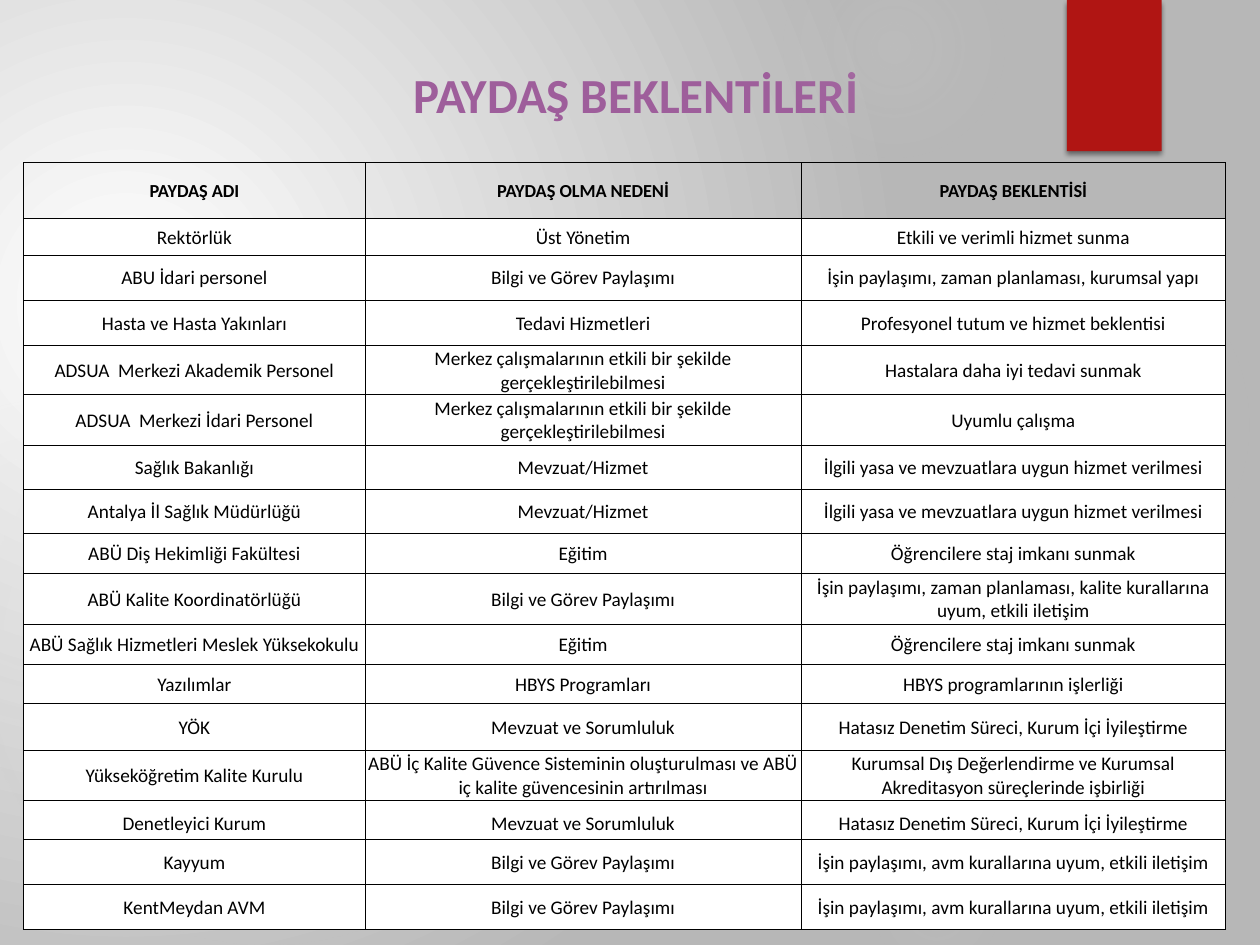
from lxml import etree
from pptx import Presentation
from pptx.dml.color import RGBColor
from pptx.enum.shapes import MSO_SHAPE
from pptx.enum.text import MSO_ANCHOR, PP_ALIGN
from pptx.oxml.ns import qn
from pptx.util import Cm, Pt

OVAL, RECT = MSO_SHAPE.OVAL, MSO_SHAPE.RECTANGLE
CENTER, MIDDLE = PP_ALIGN.CENTER, MSO_ANCHOR.MIDDLE

THEME = {
    "font": "Calibri", "title": "9E5E9B", "text": "000000", "cell": "FFFFFF",
    "ribbon": "B01513", "glow": "D9D9D9", "bg": ("FFFFFF", "B7B7B7"),
    "title_size": 28, "head_size": 10.5, "body_size": 11, "border": 0.5,
}

TITLE = "PAYDAŞ BEKLENTİLERİ"
HEADER = ("PAYDAŞ ADI", "PAYDAŞ OLMA NEDENİ", "PAYDAŞ BEKLENTİSİ")
SHARING = "Bilgi ve Görev Paylaşımı"
CENTRE_WORK = "Merkez çalışmalarının etkili bir şekilde gerçekleştirilebilmesi"
LAW = ("Mevzuat/Hizmet", "İlgili yasa ve mevzuatlara uygun hizmet verilmesi")
TRAINING = ("Eğitim", "Öğrencilere staj imkanı sunmak")
AUDIT = ("Mevzuat ve Sorumluluk", "Hatasız Denetim Süreci, Kurum İçi İyileştirme")
MALL = (SHARING, "İşin paylaşımı, avm kurallarına uyum, etkili iletişim")

STAKEHOLDERS = [
    (0.74, "Rektörlük", "Üst Yönetim", "Etkili ve verimli hizmet sunma"),
    (0.91, "ABU İdari personel", SHARING,
     "İşin paylaşımı, zaman planlaması, kurumsal yapı"),
    (0.91, "Hasta ve Hasta Yakınları", "Tedavi Hizmetleri",
     "Profesyonel tutum ve hizmet beklentisi"),
    (0.97, "ADSUA  Merkezi Akademik Personel", CENTRE_WORK,
     "Hastalara daha iyi tedavi sunmak"),
    (1.02, "ADSUA  Merkezi İdari Personel", CENTRE_WORK, "Uyumlu çalışma"),
    (0.89, "Sağlık Bakanlığı", *LAW),
    (0.89, "Antalya İl Sağlık Müdürlüğü", *LAW),
    (0.81, "ABÜ Diş Hekimliği Fakültesi", *TRAINING),
    (1.02, "ABÜ Kalite Koordinatörlüğü", SHARING,
     "İşin paylaşımı, zaman planlaması, kalite kurallarına uyum, etkili iletişim"),
    (0.81, "ABÜ Sağlık Hizmetleri Meslek Yüksekokulu", *TRAINING),
    (0.79, "Yazılımlar", "HBYS Programları", "HBYS programlarının işlerliği"),
    (0.94, "YÖK", *AUDIT),
    (1.02, "Yükseköğretim Kalite Kurulu",
     "ABÜ İç Kalite Güvence Sisteminin oluşturulması ve ABÜ iç kalite güvencesinin artırılması",
     "Kurumsal Dış Değerlendirme ve Kurumsal Akreditasyon süreçlerinde işbirliği"),
    (0.91, "Denetleyici Kurum", *AUDIT),
]
TABLES = [
    (3.28, [(1.12, *HEADER)] + STAKEHOLDERS),
    (17.83, [(0.91, "KentMeydan AVM", *MALL)]),
    (16.92, [(0.91, "Kayyum", *MALL)]),
]
TABLE_LEFT = 0.48
COL_WIDTHS = (6.88, 8.79, 8.56)

GLOWS = [
    (17.5, 4.65, 7.82, [(0, 7), (36, 6), (69, 0)]),
    (15.8, -1.27, 4.45, [(0, 14), (36, 7), (73, 0)]),
    (17.5, 16.94, 2.74, [(0, 9), (36, 5), (66, 0)]),
    (-0.43, 7.42, 11.63, [(0, 11), (36, 10), (75, 0)]),
    (-2.34, 8.05, 6.55, [(0, 8), (36, 8), (72, 0)]),
]


def rgb(name):
    return RGBColor.from_string(THEME[name])


def sub(parent, tag, **attrs):
    return etree.SubElement(parent, qn(tag), {k: str(v) for k, v in attrs.items()})


def radial(parent, stops, focus):
    solid = parent.find(qn("a:solidFill"))
    grad = etree.Element(qn("a:gradFill"), rotWithShape="1")
    gs_list = sub(grad, "a:gsLst")
    for pos, color, alpha in stops:
        gs = sub(gs_list, "a:gs", pos=pos * 1000)
        clr = sub(gs, "a:srgbClr", val=color)
        sub(clr, "a:alpha", val=alpha * 1000)
    way = sub(grad, "a:path", path="circle")
    sub(way, "a:fillToRect", **{k: v * 1000 for k, v in zip("ltrb", focus)})
    parent.replace(solid, grad)


def put_text(tf, text, size, color="text", bold=False):
    tf.word_wrap = True
    p = tf.paragraphs[0]
    p.alignment = CENTER
    r = p.add_run()
    r.text = text
    r.font.name, r.font.size, r.font.bold = THEME["font"], Pt(size), bold
    r.font.color.rgb = rgb(color)


def add_shape(s, kind, box, color):
    sp = s.shapes.add_shape(kind, *map(Cm, box))
    sp.shadow.inherit = False
    sp.fill.solid()
    sp.fill.fore_color.rgb = rgb(color)
    sp.line.fill.background()
    return sp


def add_backdrop(s):
    s.background.fill.solid()
    inner, outer = THEME["bg"]
    radial(s._element.find(".//" + qn("p:bgPr")),
           [(0, inner, 100), (100, outer, 100)], (45, 65, 125, 100))
    for left, top, size, stops in GLOWS:
        sp = add_shape(s, OVAL, (left, top, size, size), "glow")
        radial(sp._element.spPr, [(pos, THEME["glow"], a) for pos, a in stops],
               (50, 50, 50, 50))
    ribbon = add_shape(s, RECT, (21.51, 0, 1.91, 3.05), "ribbon")
    shadow = sub(ribbon._element.spPr.find(qn("a:effectLst")), "a:outerShdw",
                 blurRad=Pt(3), dist=Pt(2), dir=5400000, rotWithShape=0)
    sub(sub(shadow, "a:srgbClr", val="000000"), "a:alpha", val=45000)


def add_title(s):
    sp = s.shapes.title
    sp.left, sp.top, sp.width, sp.height = map(Cm, (5.77, 1.17, 14.1, 1.45))
    sp.text_frame.vertical_anchor = MIDDLE
    put_text(sp.text_frame, TITLE, THEME["title_size"], color="title", bold=True)


def set_borders(cell):
    tc_pr = cell._tc.get_or_add_tcPr()
    for i, side in enumerate("LRTB"):
        ln = etree.Element(qn("a:ln" + side), w=str(Pt(THEME["border"])))
        sub(sub(ln, "a:solidFill"), "a:srgbClr", val=THEME["text"])
        tc_pr.insert(i, ln)


def format_cell(cell, text, is_head):
    cell.vertical_anchor = MIDDLE
    cell.margin_left = cell.margin_right = cell.margin_top = Cm(0.03)
    cell.margin_bottom = 0
    if is_head:
        cell.fill.background()
    else:
        cell.fill.solid()
        cell.fill.fore_color.rgb = rgb("cell")
    size = THEME["head_size" if is_head else "body_size"]
    put_text(cell.text_frame, text, size, bold=is_head)
    set_borders(cell)


def add_table(s, top, rows):
    box = (TABLE_LEFT, top, sum(COL_WIDTHS), sum(row[0] for row in rows))
    tbl = s.shapes.add_table(len(rows), len(COL_WIDTHS), *map(Cm, box)).table
    tbl.first_row = tbl.horz_banding = False
    for col, width in zip(tbl.columns, COL_WIDTHS):
        col.width = Cm(width)
    for row, (height, *texts) in zip(tbl.rows, rows):
        row.height = Cm(height)
        for cell, text in zip(row.cells, texts):
            format_cell(cell, text, text in HEADER)


def main():
    prs = Presentation()
    prs.slide_width, prs.slide_height = Cm(25.4), Cm(19.05)
    s = prs.slides.add_slide(prs.slide_layouts[5])
    add_backdrop(s)
    add_title(s)
    for top, rows in TABLES:
        add_table(s, top, rows)
    prs.save("out.pptx")


if __name__ == "__main__":
    main()
